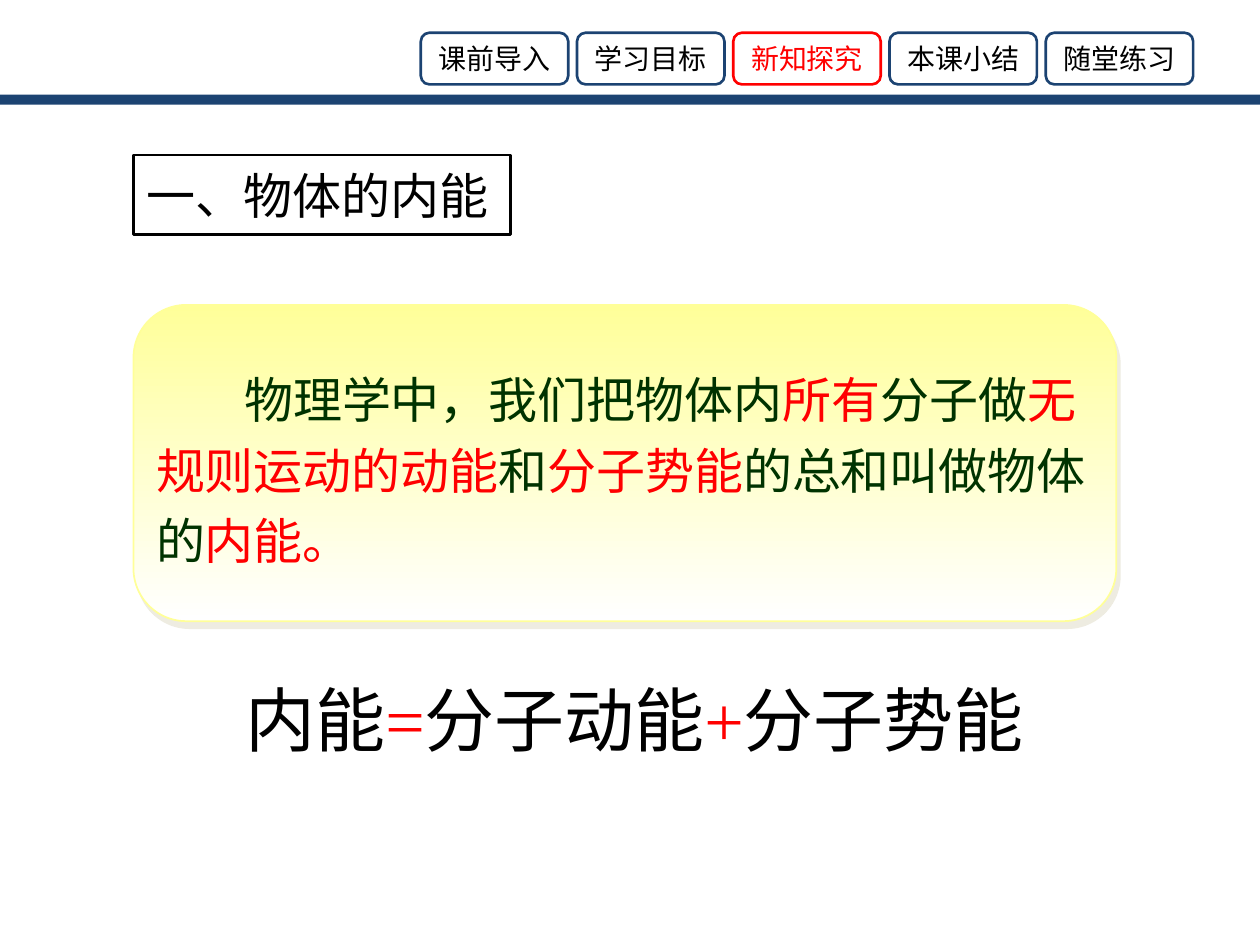
import pptx
import pptx.dml.color
import pptx.enum.shapes
import pptx.enum.text
import pptx.oxml
import pptx.util
from pptx.util import Inches

RGBColor = pptx.dml.color.RGBColor
MSO_SHAPE = pptx.enum.shapes.MSO_SHAPE
PP_ALIGN = pptx.enum.text.PP_ALIGN
MSO_ANCHOR = pptx.enum.text.MSO_ANCHOR
NAMESPACE = 'xmlns:a="http://schemas.openxmlformats.org/drawingml/2006/main"'
COLORS = {
    "navy": "1C4372",
    "red": "FF0000",
    "black": "000000",
    "green": "003300",
    "yellow": "FFFF99",
    "white": "FFFFFF",
    "shadow": "EEECE1",
}


def rgb(name):
    return RGBColor.from_string(COLORS[name])


def add_colored_text(box, size, parts):
    box.text_frame.word_wrap = True
    paragraph = box.text_frame.paragraphs[0]
    paragraph.font.size = pptx.util.Pt(size)
    paragraph.font.name = "Times New Roman"
    for text, color in parts:
        run = paragraph.add_run()
        run.text = text
        run.font.color.rgb = rgb(color)
    return paragraph


presentation = pptx.Presentation()
presentation.slide_width = Inches(10)
presentation.slide_height = Inches(7.5)
slide = presentation.slides.add_slide(presentation.slide_layouts[5])

band = slide.shapes.add_shape(MSO_SHAPE.RECTANGLE, 0, Inches(0.75), Inches(10), Inches(0.08))
band.shadow.inherit = False
band.fill.solid()
band.fill.fore_color.rgb = rgb("navy")
band.line.fill.background()

tabs = ["课前导入", "学习目标", "新知探究", "本课小结", "随堂练习"]
for index, label in enumerate(tabs):
    active = label == "新知探究"
    tab = slide.shapes.add_shape(
        MSO_SHAPE.ROUNDED_RECTANGLE,
        Inches(3.34 + 1.24 * index), Inches(0.26), Inches(1.17), Inches(0.41),
    )
    tab.shadow.inherit = False
    tab.fill.background()
    tab.line.color.rgb = rgb("red" if active else "navy")
    tab.line.width = pptx.util.Pt(1.5)
    tab.text_frame.vertical_anchor = MSO_ANCHOR.MIDDLE
    paragraph = tab.text_frame.paragraphs[0]
    paragraph.text = label
    paragraph.alignment = PP_ALIGN.CENTER
    paragraph.font.size = pptx.util.Pt(16)
    paragraph.font.name = "Noto Sans CJK SC"
    paragraph.font.color.rgb = rgb("red" if active else "black")

title = slide.shapes.title
title.left, title.top = Inches(1.06), Inches(1.23)
title.width, title.height = Inches(2.99), Inches(0.63)
title._element.spPr.append(pptx.oxml.parse_xml(
    f'<a:prstGeom {NAMESPACE} prst="roundRect"><a:avLst/></a:prstGeom>'
))
title.line.color.rgb = rgb("black")
title.line.width = pptx.util.Pt(1.5)
title.text_frame.auto_size = pptx.enum.text.MSO_AUTO_SIZE.NONE
title.text_frame.vertical_anchor = MSO_ANCHOR.MIDDLE
heading = add_colored_text(title, 28, [("一、物体的内能", "black")])
heading.alignment = PP_ALIGN.LEFT

panel = slide.shapes.add_shape(
    MSO_SHAPE.ROUNDED_RECTANGLE, Inches(1.06), Inches(2.42), Inches(7.8), Inches(2.51)
)
panel.fill.gradient()
panel.fill.gradient_angle = 270
for stop, color, position in zip(panel.fill.gradient_stops, ["yellow", "white"], [0, 1]):
    stop.color.rgb = rgb(color)
    stop.position = position
panel.line.color.rgb = rgb("yellow")
panel.line.width = pptx.util.Pt(1)
panel.shadow.inherit = False
panel._element.spPr.effectLst.append(pptx.oxml.parse_xml(
    f'<a:outerShdw {NAMESPACE} blurRad="0" dist="{pptx.util.Pt(4.5)}" dir="{63 * 60000}" '
    f'algn="ctr" rotWithShape="0"><a:srgbClr val="{COLORS["shadow"]}"/></a:outerShdw>'
))

definition_box = slide.shapes.add_textbox(Inches(1.14), Inches(2.79), Inches(7.64), Inches(1.78))
definition = add_colored_text(definition_box, 28, [
    ("物理学中，我们把物体内", "green"),
    ("所有", "red"),
    ("分子做", "green"),
    ("无规则运动的动能", "red"),
    ("和", "green"),
    ("分子势能", "red"),
    ("的总和叫做物体的", "green"),
    ("内能。", "red"),
])
definition.line_spacing = 1.2
definition._p.get_or_add_pPr().set("indent", str(Inches(0.7)))

formula_box = slide.shapes.add_textbox(Inches(1.85), Inches(5.32), Inches(6.56), Inches(0.77))
add_colored_text(formula_box, 40, [
    ("内能", "black"),
    ("=", "red"),
    ("分子动能", "black"),
    ("+", "red"),
    ("分子势能", "black"),
])

presentation.save("out.pptx")
